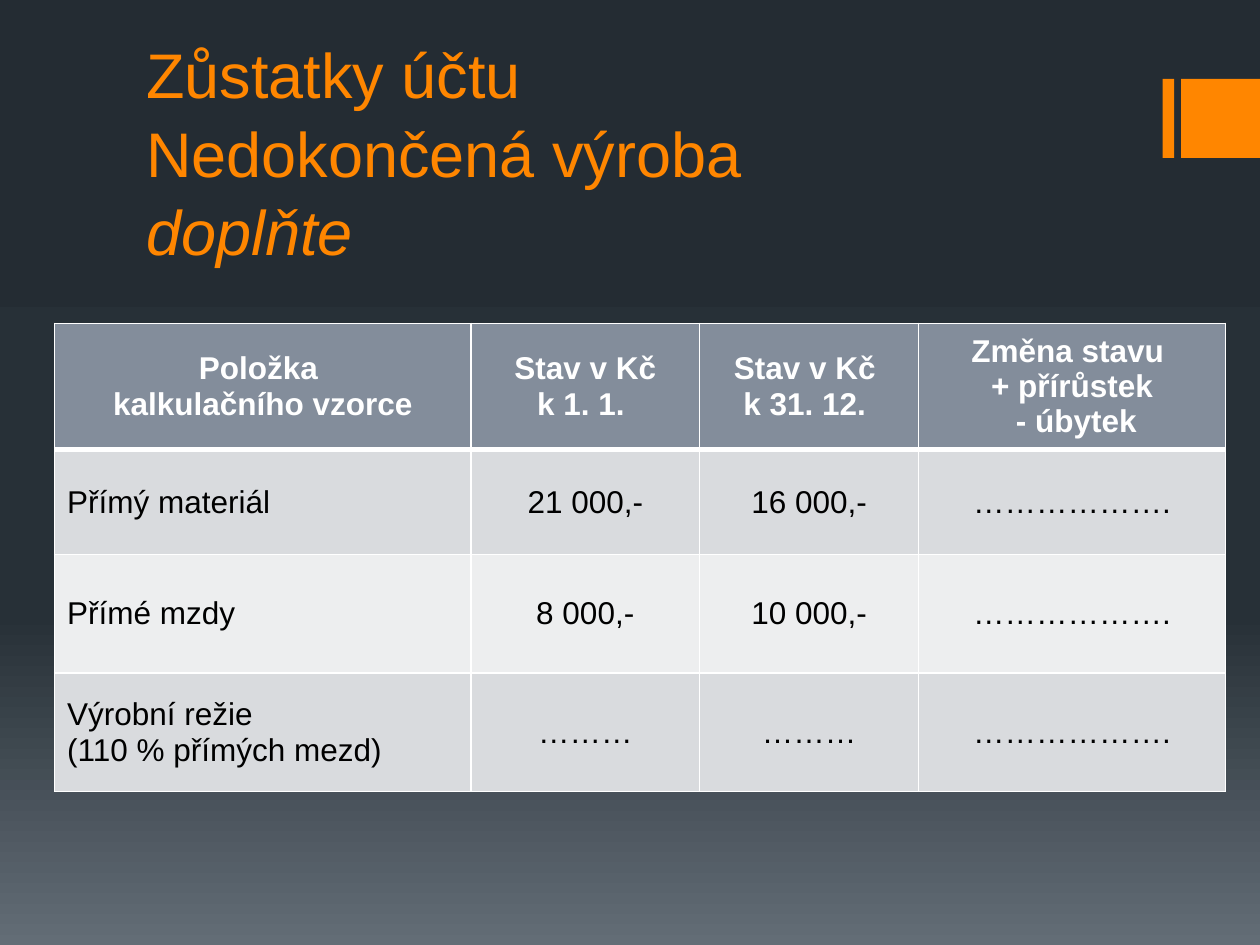
from copy import deepcopy
from dataclasses import dataclass

from lxml import etree
from pptx import Presentation
from pptx.dml.color import RGBColor
from pptx.enum.shapes import MSO_SHAPE
from pptx.enum.text import MSO_ANCHOR, PP_ALIGN
from pptx.oxml.ns import qn
from pptx.util import Pt

RECTANGLE = MSO_SHAPE.RECTANGLE
BOTTOM, MIDDLE = MSO_ANCHOR.BOTTOM, MSO_ANCHOR.MIDDLE
LEFT, CENTER = PP_ALIGN.LEFT, PP_ALIGN.CENTER

ORANGE = RGBColor(0xFF, 0x86, 0x00)
WHITE = RGBColor(0xFF, 0xFF, 0xFF)
BLACK = RGBColor(0x00, 0x00, 0x00)
HEADER_FILL = RGBColor(0x83, 0x8D, 0x9B)
BAND_FILLS = (RGBColor(0xD9, 0xDB, 0xDE), RGBColor(0xED, 0xEE, 0xEF))
BACKGROUND_STOPS = (
    (0, RGBColor(0x24, 0x2C, 0x33)),
    (0.65, RGBColor(0x27, 0x30, 0x37)),
    (1, RGBColor(0x63, 0x6D, 0x76)),
)

FONT = "Arial"
COLUMN_WIDTHS = (238, 130.5, 125.3, 175.2)
ROW_HEIGHTS = (67.7, 60.2, 67.7, 67.7)
LONG_BLANK = "………………."
SHORT_BLANK = "………"
ROWS = (
    ("Položka \nkalkulačního vzorce", "Stav v Kč\nk 1. 1. ",
     "Stav v Kč \nk 31. 12. ", "Změna stavu \n+ přírůstek\n - úbytek"),
    ("Přímý materiál", "21 000,-", "16 000,-", LONG_BLANK),
    ("Přímé mzdy", "8 000,-", "10 000,-", LONG_BLANK),
    ("Výrobní režie\n(110 % přímých mezd)", SHORT_BLANK, SHORT_BLANK, LONG_BLANK),
)


@dataclass(frozen=True)
class Bar:
    left: float
    width: float


ACCENT_BARS = (Bar(664.3, 6.6), Bar(674.9, 45.1))


def write_text(paragraph, text: str, *, size: float, color: RGBColor,
               bold: bool = False, italic: bool = False, align=LEFT) -> None:
    paragraph.alignment = align
    for index, line in enumerate(text.split("\n")):
        if index:
            paragraph.add_line_break()
        if line:
            run = paragraph.add_run()
            run.text = line
            font = run.font
            font.name, font.size, font.color.rgb = FONT, Pt(size), color
            font.bold, font.italic = bold, italic


def paint_background(slide) -> None:
    fill = slide.background.fill
    fill.gradient()
    fill.gradient_angle = 270
    first_stop = next(slide.element.iter(qn("a:gs")))
    first_stop.addnext(deepcopy(first_stop))
    for stop, (position, color) in zip(fill.gradient_stops, BACKGROUND_STOPS):
        stop.position, stop.color.rgb = position, color


def draw_bar(slide, bar: Bar) -> None:
    shape = slide.shapes.add_shape(
        RECTANGLE, Pt(bar.left), Pt(45.1), Pt(bar.width), Pt(45.1))
    shape.shadow.inherit = False
    shape.fill.solid()
    shape.fill.fore_color.rgb = ORANGE
    shape.line.fill.background()


def draw_title(slide) -> None:
    frame = slide.shapes.add_textbox(Pt(76.5), Pt(66.2), Pt(576), Pt(90.7)).text_frame
    frame.word_wrap = True
    frame.vertical_anchor = BOTTOM
    paragraph = frame.paragraphs[0]
    paragraph.line_spacing = 1.04
    write_text(paragraph, "Zůstatky účtu \nNedokončená výroba\n", size=36, color=ORANGE)
    write_text(paragraph, "doplňte", size=36, color=ORANGE, italic=True)


def set_border(cell, side: str, width: float) -> None:
    properties = cell._tc.get_or_add_tcPr()
    line = etree.SubElement(properties, qn(f"a:ln{side}"), w=str(Pt(width)))
    solid = etree.SubElement(line, qn("a:solidFill"))
    etree.SubElement(solid, qn("a:srgbClr"), val=str(WHITE))


def fill_cell(cell, text: str, row: int, column: int) -> None:
    header = row == 0
    set_border(cell, "L", 1)
    set_border(cell, "R", 1)
    set_border(cell, "T", 3 if row == 1 else 1)
    set_border(cell, "B", 3 if header else 1)
    cell.fill.solid()
    cell.fill.fore_color.rgb = HEADER_FILL if header else BAND_FILLS[(row - 1) % 2]
    cell.vertical_anchor = MIDDLE
    frame = cell.text_frame
    for index, line in enumerate(text.split("\n")):
        paragraph = frame.add_paragraph() if index else frame.paragraphs[0]
        write_text(paragraph, line, size=18, color=WHITE if header else BLACK,
                   bold=header, align=CENTER if header or column else LEFT)


def draw_table(slide) -> None:
    table = slide.shapes.add_table(
        len(ROWS), len(COLUMN_WIDTHS), Pt(31.2), Pt(184.8),
        Pt(sum(COLUMN_WIDTHS)), Pt(sum(ROW_HEIGHTS))).table
    for column, width in zip(table.columns, COLUMN_WIDTHS):
        column.width = Pt(width)
    for row, height in zip(table.rows, ROW_HEIGHTS):
        row.height = Pt(height)
    for row, texts in enumerate(ROWS):
        for column, text in enumerate(texts):
            fill_cell(table.cell(row, column), text, row, column)


def main() -> None:
    presentation = Presentation()
    presentation.slide_width, presentation.slide_height = Pt(720), Pt(540)
    slide = presentation.slides.add_slide(presentation.slide_layouts[6])
    paint_background(slide)
    for bar in ACCENT_BARS:
        draw_bar(slide, bar)
    draw_title(slide)
    draw_table(slide)
    presentation.save("out.pptx")


if __name__ == "__main__":
    main()
